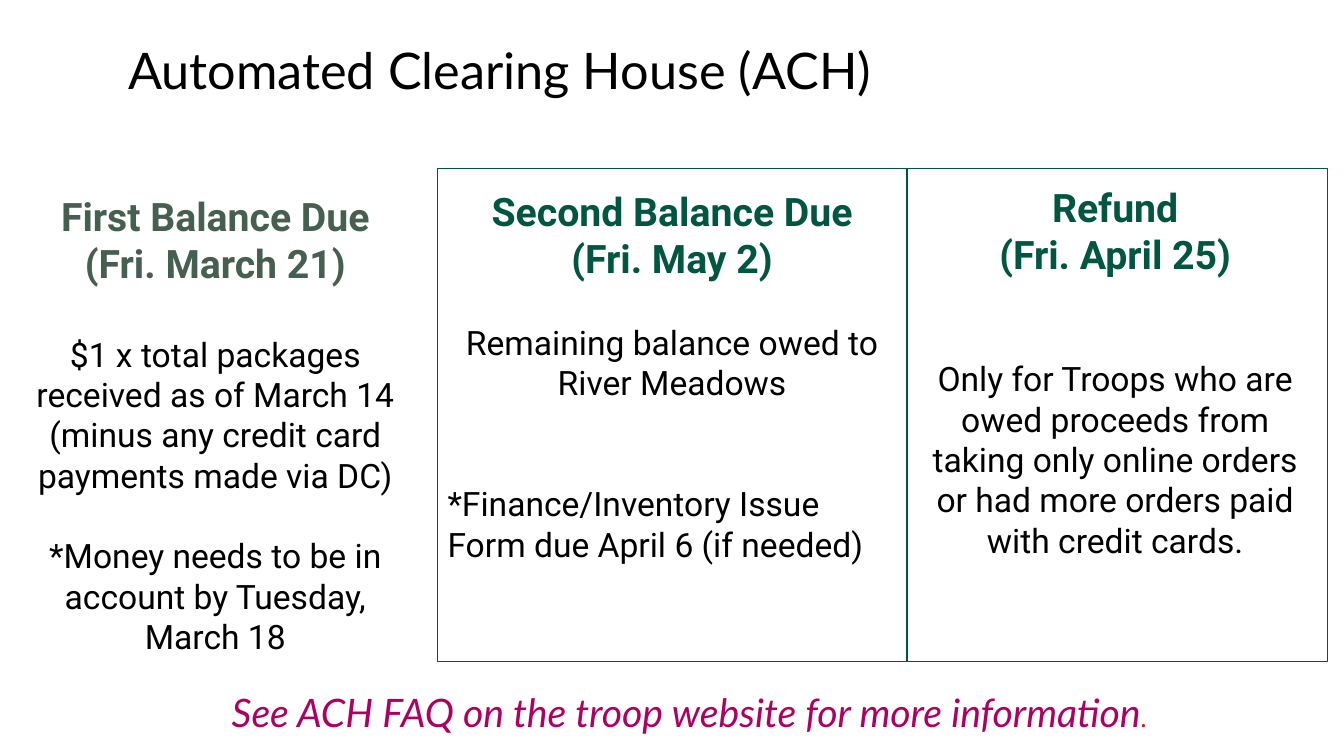
from pptx import Presentation
from pptx.dml.color import RGBColor
from pptx.enum.shapes import MSO_SHAPE
from pptx.enum.text import MSO_ANCHOR, PP_ALIGN
from pptx.util import Inches, Pt

COLORS = {
    "black": "000000",
    "green": "005640",
    "sage": "455F51",
    "magenta": "AF0061",
    "red": "FF0000",
}
HEADING_SIZE, BODY_SIZE = 28, 24
LINE_HEIGHT = 1.2


def style(font, name, size, color, bold=False, italic=False):
    font.name = name
    font.size = Pt(size)
    font.bold = bold
    font.italic = italic
    font.color.rgb = RGBColor.from_string(COLORS[color])


def add_text_box(left, top, width, height):
    frame = slide.shapes.add_textbox(
        Inches(left), Inches(top), Inches(width), Inches(height)).text_frame
    frame.word_wrap = True
    return frame


presentation = Presentation()
presentation.slide_width = Inches(13.33)
presentation.slide_height = Inches(7.5)
slide = presentation.slides.add_slide(presentation.slide_layouts[5])

# Title
title = slide.shapes.title
title.left, title.top = Inches(1.17), Inches(0.37)
title.width, title.height = Inches(9.72), Inches(0.99)
title.text_frame.text = "Automated Clearing House (ACH)"
title.text_frame.vertical_anchor = MSO_ANCHOR.TOP
title.text_frame.margin_top = Inches(0.09)
heading = title.text_frame.paragraphs[0]
heading.alignment = PP_ALIGN.LEFT
heading.line_spacing = 0.9
style(heading.runs[0].font, "Lato", 36, "black")

# Frames around the second payment and the refund
for left, width in [(4.34, 4.66), (8.99, 4.18)]:
    frame_box = slide.shapes.add_shape(
        MSO_SHAPE.RECTANGLE, Inches(left), Inches(1.67), Inches(width), Inches(4.89))
    frame_box.shadow.inherit = False
    frame_box.fill.background()
    frame_box.line.color.rgb = RGBColor.from_string(COLORS["green"])
    frame_box.line.width = Pt(0.75)

# Columns: box, heading colour, heading lines,
# then body lines as (text, space before in points, alignment)
heading_gap = HEADING_SIZE * LINE_HEIGHT
body_gap = BODY_SIZE * LINE_HEIGHT
center, left_side = PP_ALIGN.CENTER, PP_ALIGN.LEFT
columns = [
    ((0.14, 1.86, 3.99, 5.05), "sage", ["First Balance Due", "(Fri. March 21)"], [
        ("$1 x total packages received as of March 14", heading_gap, center),
        ("(minus any credit card payments made via DC)", 0, center),
        ("*Money needs to be in account by Tuesday, March 18", body_gap, center),
    ]),
    ((4.34, 1.81, 4.65, 3.88), "green", ["Second Balance Due", "(Fri. May 2)"], [
        ("Remaining balance owed to River Meadows", body_gap, center),
        ("*Finance/Inventory Issue", 2 * body_gap, left_side),
        ("Form due April 6 (if needed)", 0, left_side),
    ]),
    ((8.99, 1.77, 4.14, 4.27), "green", ["Refund", "(Fri. April 25)"], [
        ("Only for Troops who are owed proceeds from taking only online orders "
         "or had more orders paid with credit cards.", 2 * body_gap, center),
    ]),
]
for box, heading_color, heading_lines, body_lines in columns:
    column = add_text_box(*box)
    column.text = "\n".join(heading_lines + [text for text, _, _ in body_lines])
    paragraphs = column.paragraphs
    for paragraph in paragraphs[:2]:
        paragraph.alignment = center
        style(paragraph.runs[0].font, "Roboto", HEADING_SIZE, heading_color, bold=True)
    for paragraph, (_, gap, alignment) in zip(paragraphs[2:], body_lines):
        paragraph.alignment = alignment
        paragraph.space_before = Pt(gap)
        style(paragraph.runs[0].font, "Roboto", BODY_SIZE, "black")

# Closing line
closing = add_text_box(0.51, 6.78, 12.65, 0.57).paragraphs[0]
closing.alignment = center
pointer = closing.add_run()
pointer.text = "See ACH FAQ on the troop website for more information"
style(pointer.font, "Lato", 28, "magenta", italic=True)
full_stop = closing.add_run()
full_stop.text = "."
style(full_stop.font, "Lato", 18, "red")

presentation.save("out.pptx")
